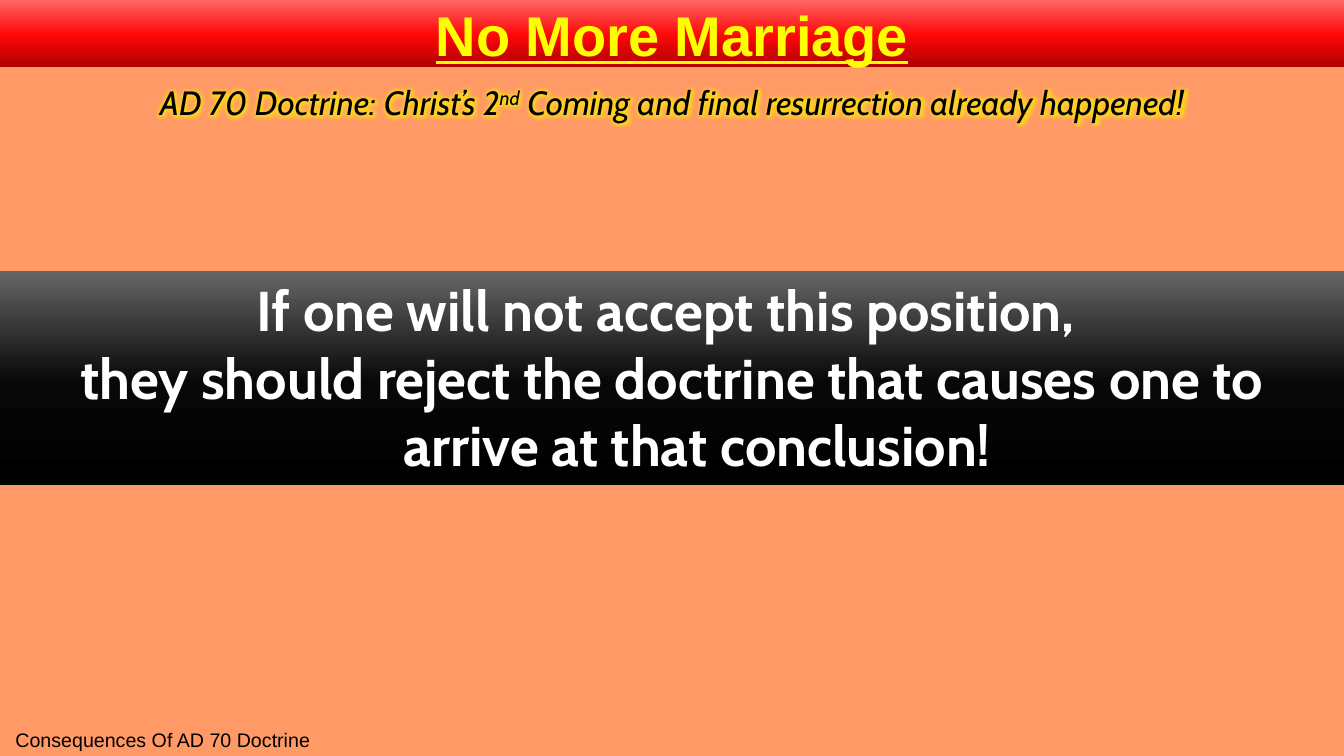
import pptx
import pptx.util
import pptx.dml.color
import pptx.enum.shapes
import pptx.enum.text
import pptx.oxml

Cm = pptx.util.Cm
Pt = pptx.util.Pt
RGB = pptx.dml.color.RGBColor
ns = 'xmlns:a="http://schemas.openxmlformats.org/drawingml/2006/main"'
anchor = pptx.enum.text.MSO_ANCHOR
width = Cm(33.87)

hues = {
    "page": "FF9966", "yellow": "FFFF00", "black": "000000",
    "white": "FFFFFF", "glow": "FFD320",
}
fades = {
    "red": [(0, "AB0000"), (48, "FF0808"), (100, "FF6666")],
    "black": [(0, "000000"), (48, "080808"), (100, "666666")],
}


def write(para, text, size, font="Arial", color="black", bold=False,
          italic=False, under=False, raised=False, glow=False, hang=False):
    """Add a centred run of text with its format."""
    para.alignment = pptx.enum.text.PP_ALIGN.CENTER
    if hang:
        props = para._p.get_or_add_pPr()
        props.set("marL", str(Cm(1.27)))
        props.set("indent", str(-Cm(1.27)))
    run = para.add_run()
    run.text = text
    run.font.size = Pt(size)
    run.font.bold, run.font.italic, run.font.underline = bold, italic, under
    run.font.color.rgb = RGB.from_string(hues[color])
    props = run._r.get_or_add_rPr()
    if glow:
        props.append(pptx.oxml.parse_xml(
            f'<a:effectLst {ns}><a:glow rad="{Pt(8)}">'
            f'<a:srgbClr val="{hues["glow"]}"/></a:glow></a:effectLst>'))
    run.font.name = font
    if raised:
        props.set("baseline", "30000")


def shade(shape, fade):
    """Fill a shape with a gradient that rises from its bottom edge."""
    stops = "".join(
        f'<a:gs pos="{place * 1000}"><a:srgbClr val="{tone}"/></a:gs>'
        for place, tone in fades[fade])
    shape.fill.background()
    props = shape._element.spPr
    blank = props.find(pptx.oxml.ns.qn("a:noFill"))
    props.replace(blank, pptx.oxml.parse_xml(
        f'<a:gradFill {ns} rotWithShape="1"><a:gsLst>{stops}</a:gsLst>'
        '<a:lin ang="16200000" scaled="0"/></a:gradFill>'))
    shape.line.fill.background()


# Slide and background
deck = pptx.Presentation()
deck.slide_width, deck.slide_height = width, Cm(19.05)
slide = deck.slides.add_slide(deck.slide_layouts[5])
slide.background.fill.solid()
slide.background.fill.fore_color.rgb = RGB.from_string(hues["page"])

# Title bar
title = slide.shapes.title
title.left, title.top, title.width, title.height = 0, 0, width, Cm(1.7)
shade(title, "red")
frame = title.text_frame
frame.auto_size = pptx.enum.text.MSO_AUTO_SIZE.NONE
frame.vertical_anchor = anchor.MIDDLE
write(frame.paragraphs[0], "No More Marriage", 40, color="yellow",
      bold=True, under=True)

# Footer label
label = slide.shapes.add_textbox(Cm(0.08), Cm(18.21), Cm(8.05), Cm(0.84))
label.text_frame.word_wrap = True
write(label.text_frame.paragraphs[0], "Consequences Of AD 70 Doctrine", 14)

# Glowing subtitle
sub = slide.shapes.add_textbox(0, Cm(1.93), width, Cm(1.27))
sub.text_frame.word_wrap = True
for text, raised in [
    ("AD 70 Doctrine: Christ’s 2", False),
    ("nd", True),
    (" Coming and final resurrection already happened!", False),
]:
    write(sub.text_frame.paragraphs[0], text, 24, font="Cabin", italic=True,
          raised=raised, glow=True, hang=True)

# Black band with the conclusion
band = slide.shapes.add_shape(
    pptx.enum.shapes.MSO_SHAPE.RECTANGLE, 0, Cm(6.83), width, Cm(5.39))
band.shadow.inherit = False
shade(band, "black")
frame = band.text_frame
frame.word_wrap = True
frame.vertical_anchor = anchor.TOP
lines = [
    "If one will not accept this position, ",
    "they should reject the doctrine that causes one to "
    "arrive at that conclusion!",
]
for spot, text in enumerate(lines):
    para = frame.add_paragraph() if spot else frame.paragraphs[0]
    write(para, text, 40, font="Cabin", color="white", bold=True, hang=True)

deck.save("out.pptx")
